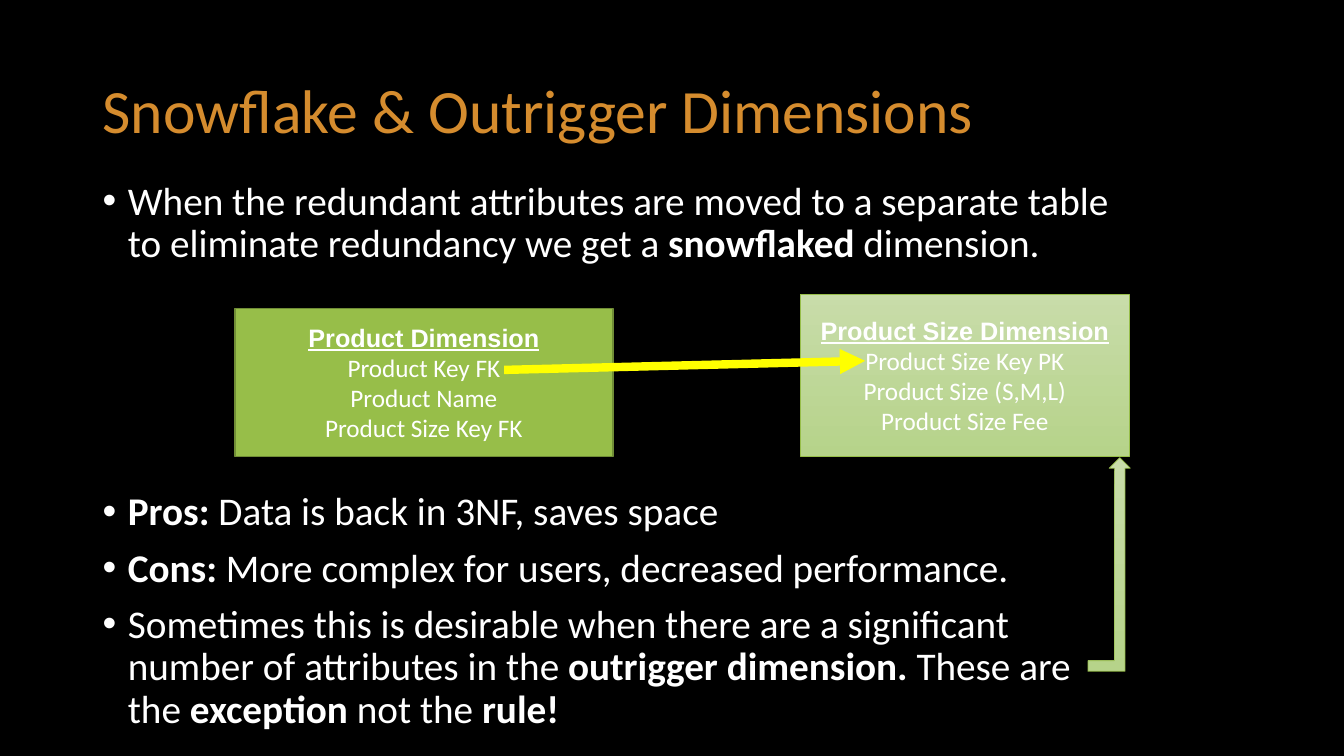
from lxml.etree import SubElement
from pptx import Presentation
from pptx.dml.color import RGBColor
from pptx.enum.shapes import MSO_CONNECTOR as Connector, MSO_SHAPE as Shape
from pptx.enum.text import MSO_ANCHOR as Anchor, PP_ALIGN as Align
from pptx.oxml.ns import qn
from pptx.util import Inches, Pt

BLACK = RGBColor(0x00, 0x00, 0x00)
WHITE = RGBColor(0xFF, 0xFF, 0xFF)
ORANGE = RGBColor(0xD5, 0x8C, 0x2E)
GREEN = RGBColor(0x97, 0xBE, 0x49)
DARK_GREEN = RGBColor(0x70, 0x8D, 0x36)
PALE_TOP = RGBColor(0xC8, 0xDC, 0xA9)
PALE_BOTTOM = RGBColor(0xB6, 0xD3, 0x8A)
YELLOW = RGBColor(0xFF, 0xFF, 0x00)

TITLE = "Snowflake & Outrigger Dimensions"
INTRO = [
    [("When the redundant attributes are moved to a separate table to eliminate "
      "redundancy we get a ", False), ("snowflaked", True), (" dimension.", False)],
]
VERDICT = [
    [("Pros:", True), (" Data is back in 3NF, saves space", False)],
    [("Cons:", True), (" More complex for users, decreased performance.", False)],
    [("Sometimes this is desirable when there are a significant number of "
      "attributes in the ", False), ("outrigger dimension. ", True),
     ("These are the ", False), ("exception ", True), ("not the ", False), ("rule!", True)],
]
PRODUCT = ["Product Dimension", "Product Key FK", "Product Name", "Product Size Key FK"]
SIZE = ["Product Size Dimension", "Product Size Key PK", "Product Size (S,M,L)",
        "Product Size Fee"]

WIDTH, HEIGHT = 13.33, 7.5
LEFT = 0.92
BODY_WIDTH = 10.25
TABLE_BOTTOM = 4.53

deck = Presentation()
deck.slide_width, deck.slide_height = Inches(WIDTH), Inches(HEIGHT)
page = deck.slides.add_slide(deck.slide_layouts[6])
page.background.fill.solid()
page.background.fill.fore_color.rgb = BLACK


def style(para, size, color, name="Calibri"):
    font = para.font
    font.size, font.name, font.color.rgb = Pt(size), name, color


def add_text(left, top, width, height):
    box = page.shapes.add_textbox(*map(Inches, (left, top, width, height)))
    box.text_frame.word_wrap = True
    return box.text_frame


def add_bullets(top, height, items):
    frame = add_text(LEFT, top, BODY_WIDTH, height)
    for index, item in enumerate(items):
        para = frame.add_paragraph() if index else frame.paragraphs[0]
        style(para, 28, WHITE)
        para.line_spacing = 0.9
        para.space_before = Pt(10 if index else 0)
        props = para._p.get_or_add_pPr()
        props.set("marL", str(Inches(0.25)))
        props.set("indent", str(-Inches(0.25)))
        bullet_font = props.makeelement(qn("a:buFont"), {"typeface": "Arial"})
        bullet = props.makeelement(qn("a:buChar"), {"char": "•"})
        props.find(qn("a:defRPr")).addprevious(bullet_font)
        bullet_font.addnext(bullet)
        for text, bold in item:
            span = para.add_run()
            span.text, span.font.bold = text, bold


def add_shape(kind, left, top, width, height, line_color, line_width, pale):
    shape = page.shapes.add_shape(kind, *map(Inches, (left, top, width, height)))
    shape.shadow.inherit = False
    if pale:
        shape.fill.gradient()
        shape.fill.gradient_angle = 270
        for stop, color in zip(shape.fill.gradient_stops, (PALE_TOP, PALE_BOTTOM)):
            stop.color.rgb = color
    else:
        shape.fill.solid()
        shape.fill.fore_color.rgb = GREEN
    shape.line.color.rgb, shape.line.width = line_color, Pt(line_width)
    return shape


def add_entity(lines, left, top, width, line_color, line_width, pale):
    box = add_shape(Shape.RECTANGLE, left, top, width, TABLE_BOTTOM - top,
                    line_color, line_width, pale)
    frame = box.text_frame
    frame.word_wrap, frame.vertical_anchor = False, Anchor.MIDDLE
    for index, text in enumerate(lines):
        para = frame.add_paragraph() if index else frame.paragraphs[0]
        para.text, para.alignment = text, Align.CENTER
        heading = index == 0
        style(para, 18, WHITE, "Arial" if heading else "Calibri")
        para.font.bold = para.font.underline = heading


title = add_text(LEFT, 0.4, 11.5, 1.45)
title.vertical_anchor = Anchor.MIDDLE
title.text = TITLE
title.paragraphs[0].line_spacing = 0.9
style(title.paragraphs[0], 44, ORANGE)

add_bullets(1.75, 1, INTRO)
add_bullets(4.83, 2.5, VERDICT)
add_entity(PRODUCT, 2.33, 3.06, 3.75, DARK_GREEN, 1, False)
add_entity(SIZE, 7.94, 2.92, 3.26, GREEN, 0.5, True)

key_link = page.shapes.add_connector(
    Connector.STRAIGHT, *map(Inches, (5, 3.67, 8.58, 3.58)))
key_link.line.color.rgb, key_link.line.width = YELLOW, Pt(6)
SubElement(key_link.line._get_or_add_ln(), qn("a:tailEnd"), type="triangle")
SubElement(key_link._element.spPr, qn("a:effectLst"))

add_shape(Shape.BENT_UP_ARROW, 10.79, 4.54, 0.42, 2.12, GREEN, 0.5, True)

deck.save("out.pptx")
